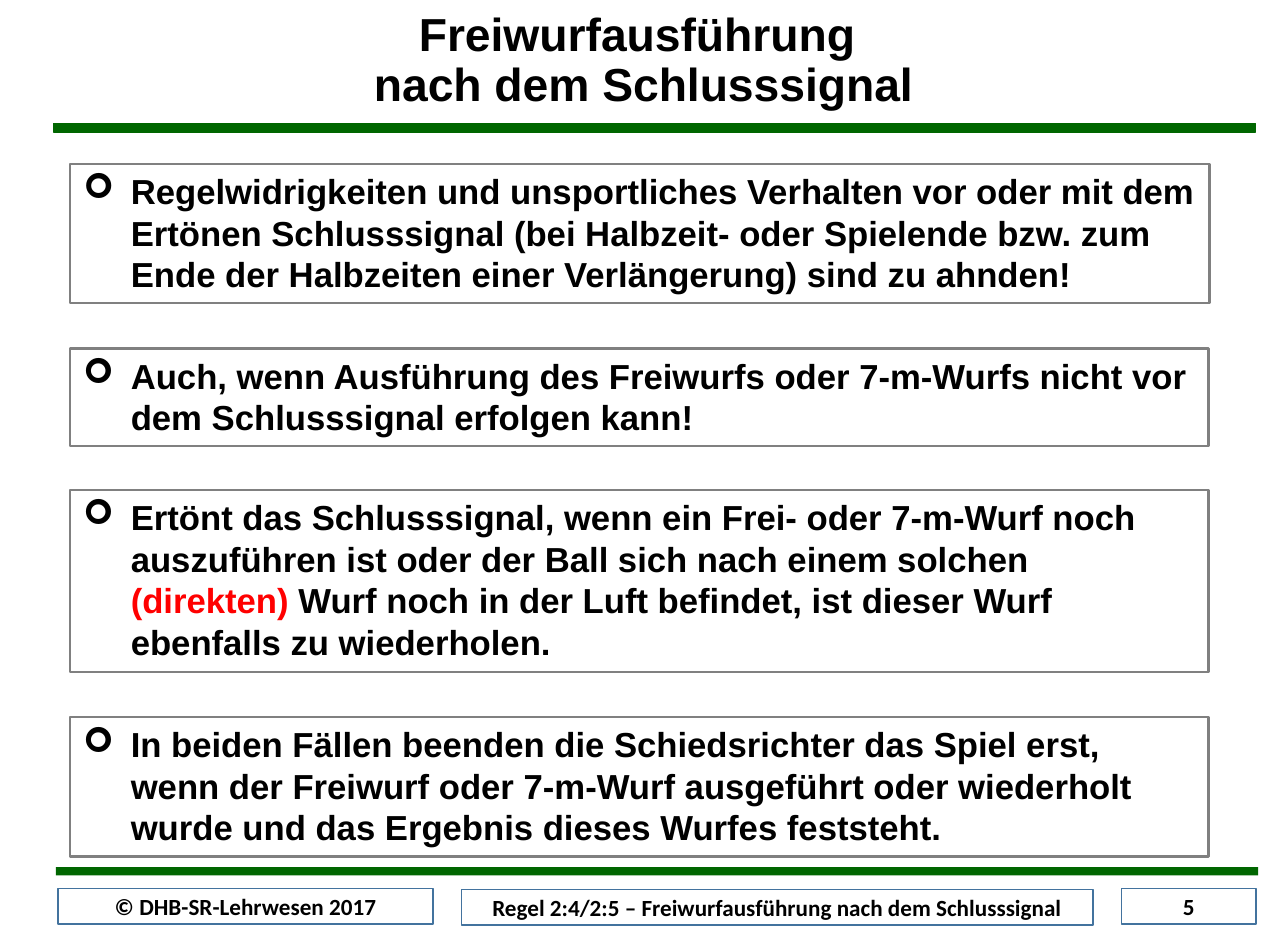
from dataclasses import dataclass
from lxml.etree import SubElement
from pptx import Presentation
from pptx.dml.color import RGBColor
from pptx.enum.shapes import MSO_SHAPE as Shape
from pptx.enum.text import MSO_ANCHOR as Anchor, MSO_AUTO_SIZE as Auto, PP_ALIGN as Align
from pptx.oxml.ns import qn
from pptx.util import Inches, Pt

GREEN, GRAY, BLUE = "006600", "808080", "43739E"
BLACK, WHITE, RED = "000000", "FFFFFF", "FF0000"


@dataclass
class Box:
    left: float
    top: float
    width: float
    height: float


@dataclass
class Run:
    text: str
    color: str = BLACK


@dataclass
class Rule:
    box: Box
    runs: list[Run]


@dataclass
class Label:
    box: Box
    text: str


BARS = [Box(0.45, 1.04, 10.11, 0.07), Box(0.47, 7.29, 10.11, 0.07)]
TITLE = ["Freiwurfausführung ", "nach dem Schlusssignal"]
LABELS = [
    Label(Box(0.49, 7.47, 3.15, 0.3), "© DHB-SR-Lehrwesen 2017"),
    Label(Box(3.88, 7.48, 5.31, 0.3),
          "Regel 2:4/2:5 – Freiwurfausführung nach dem Schlusssignal"),
    Label(Box(9.43, 7.47, 1.13, 0.3), "5"),
]
RULES = [
    Rule(Box(0.59, 1.38, 9.58, 1.17), [
        Run("Regelwidrigkeiten und unsportliches Verhalten vor oder mit dem "
            "Ertönen Schlusssignal (bei Halbzeit- oder Spielende bzw. zum "
            "Ende der Halbzeiten einer Verlängerung) sind zu ahnden!")]),
    Rule(Box(0.59, 2.93, 9.57, 0.82), [
        Run("Auch, wenn Ausführung des Freiwurfs oder 7-m-Wurfs nicht vor "
            "dem Schlusssignal erfolgen kann!")]),
    Rule(Box(0.59, 4.12, 9.57, 1.53), [
        Run("Ertönt das Schlusssignal, wenn ein Frei- oder 7-m-Wurf noch "
            "auszuführen ist oder der Ball sich nach einem solchen "),
        Run("(direkten)", RED),
        Run(" Wurf noch in der Luft befindet, ist dieser Wurf "
            "ebenfalls zu wiederholen.")]),
    Rule(Box(0.59, 6.03, 9.57, 1.17), [
        Run("In beiden Fällen beenden die Schiedsrichter das Spiel erst, "
            "wenn der Freiwurf oder 7-m-Wurf ausgeführt oder wiederholt "
            "wurde und das Ergebnis dieses Wurfes feststeht.")]),
]


def paint(target, color: str) -> None:
    target.rgb = RGBColor.from_string(color)


def place(box: Box) -> list[int]:
    return [Inches(n) for n in (box.left, box.top, box.width, box.height)]


def add_rect(slide, box: Box, fill: str = "", line: str = "", width: float = 1):
    rect = slide.shapes.add_shape(Shape.RECTANGLE, *place(box))
    rect.shadow.inherit = False
    if fill:
        rect.fill.solid()
        paint(rect.fill.fore_color, fill)
    else:
        rect.fill.background()
    if line:
        paint(rect.line.color, line)
        rect.line.width = Pt(width)
    else:
        rect.line.fill.background()
    return rect


def add_run(para, part: Run, font: str, size: float) -> None:
    run = para.add_run()
    run.text = part.text
    run.font.name, run.font.size, run.font.bold = font, Pt(size), True
    paint(run.font.color, part.color)


def set_frame(frame, side: float, anchor: Anchor) -> None:
    frame.word_wrap = True
    frame.vertical_anchor = anchor
    frame.margin_left = frame.margin_right = Inches(side)
    frame.margin_top = frame.margin_bottom = Inches(0.05)


def add_bullet(para, indent: float) -> None:
    props = para._p.get_or_add_pPr()
    props.set("marL", str(Inches(indent)))
    props.set("indent", str(-Inches(indent)))
    SubElement(props, qn("a:buFont"), typeface="Wingdings")
    SubElement(props, qn("a:buChar"), char="➢")


def add_title(slide) -> None:
    frame = slide.shapes.add_textbox(*place(Box(1.71, 0.05, 7.4, 1.13))).text_frame
    set_frame(frame, 0.1, Anchor.TOP)
    for i, text in enumerate(TITLE):
        para = frame.add_paragraph() if i else frame.paragraphs[0]
        para.alignment, para.line_spacing = Align.CENTER, 0.9
        add_run(para, Run(text), "Arial", 28)


def add_label(slide, label: Label) -> None:
    frame = add_rect(slide, label.box, WHITE, BLUE).text_frame
    set_frame(frame, 0.1, Anchor.MIDDLE)
    para = frame.paragraphs[0]
    para.alignment = Align.CENTER
    add_run(para, Run(label.text), "Calibri", 14)


def add_rule(slide, rule: Rule) -> None:
    frame = add_rect(slide, rule.box, line=GRAY, width=1.5).text_frame
    set_frame(frame, 0.11, Anchor.TOP)
    frame.auto_size = Auto.SHAPE_TO_FIT_TEXT
    para = frame.paragraphs[0]
    para.alignment = Align.LEFT
    add_bullet(para, 0.4)
    for part in rule.runs:
        add_run(para, part, "Arial", 21)


def main() -> None:
    deck = Presentation()
    deck.slide_width, deck.slide_height = Inches(10.83), Inches(7.92)
    slide = deck.slides.add_slide(deck.slide_layouts[6])

    # Green bars, the upper one outlined
    for bar, edge in zip(BARS, (GREEN, "")):
        add_rect(slide, bar, GREEN, edge, 0.75)

    # Footer
    for label in LABELS:
        add_label(slide, label)

    # Rules and title
    for rule in RULES:
        add_rule(slide, rule)
    add_title(slide)

    deck.save("out.pptx")


if __name__ == "__main__":
    main()
